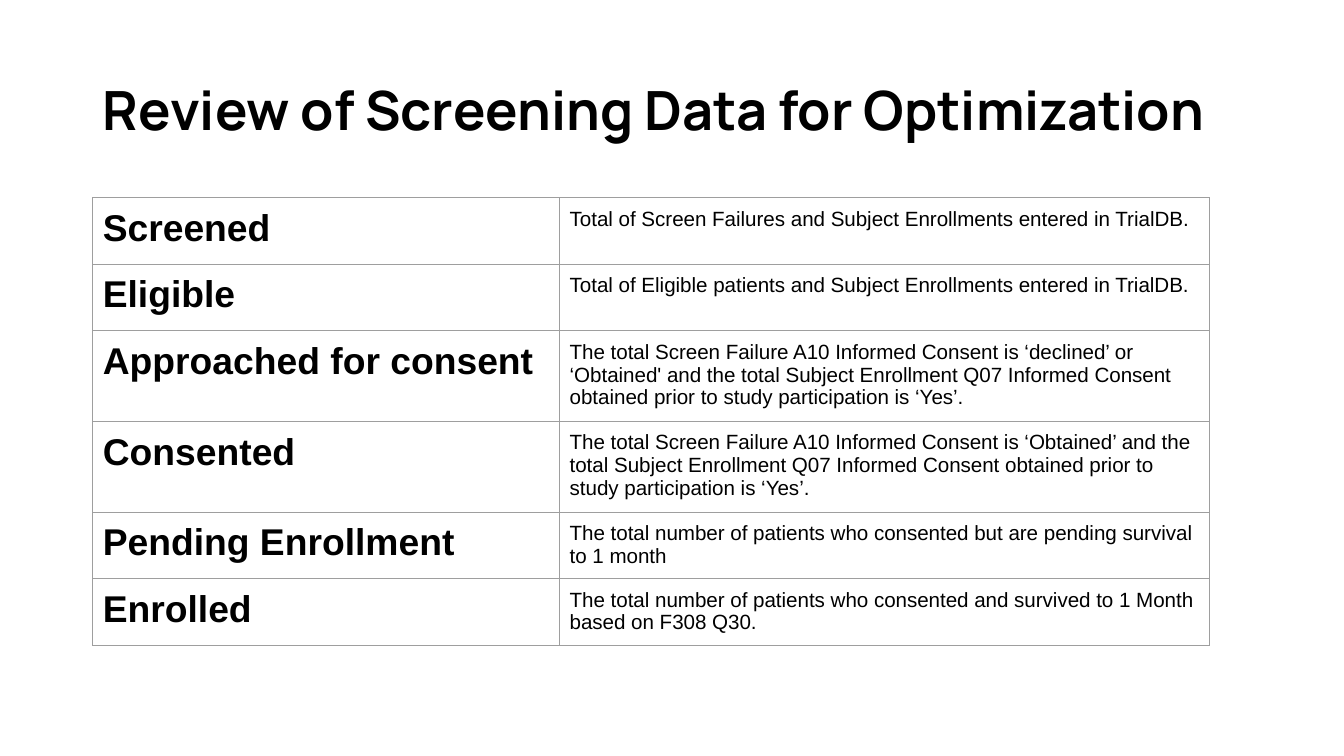
"""Build the slide that defines the screening data categories."""
import dataclasses
import typing

import lxml.etree
import pptx
import pptx.dml.color
import pptx.enum.text
import pptx.oxml.ns
import pptx.util


@dataclasses.dataclass(frozen=True)
class Theme:
    """Colours, fonts and type sizes."""
    ink: str = "000000"
    border: str = "9E9E9E"
    title_font: str = "Manrope"
    table_font: str = "Arial"
    title_size: float = 38.67
    term_size: float = 26.67
    meaning_size: float = 14.67
    border_width: float = 0.75


class Category(typing.NamedTuple):
    """One table row."""
    term: str
    meaning: str
    height: int


THEME = Theme()
CATEGORIES = [
    Category("Screened", "Total of Screen Failures and Subject Enrollments entered in TrialDB.", 66),
    Category("Eligible", "Total of Eligible patients and Subject Enrollments entered in TrialDB.", 66),
    Category("Approached for consent",
             "The total Screen Failure A10 Informed Consent is ‘declined’ or ‘Obtained' and the total "
             "Subject Enrollment Q07 Informed Consent obtained prior to study participation is ‘Yes’.", 90),
    Category("Consented",
             "The total Screen Failure A10 Informed Consent is ‘Obtained’ and the total "
             "Subject Enrollment Q07 Informed Consent obtained prior to study participation is ‘Yes’.", 90),
    Category("Pending Enrollment",
             "The total number of patients who consented but are pending survival to 1 month", 66),
    Category("Enrolled",
             "The total number of patients who consented and survived to 1 Month based on F308 Q30.", 66),
]
COLUMN_WIDTHS = (463, 645)


def px(n: int) -> int:
    """Turn px, 100 to the inch, into EMU."""
    return n * 9144


def add_run(p: typing.Any, text: str, font: str, size: float, bold: bool) -> None:
    """Add one formatted run to a paragraph."""
    r = p.add_run()
    r.text = text
    r.font.name = font
    r.font.size = pptx.util.Pt(size)
    r.font.bold = bold
    r.font.color.rgb = pptx.dml.color.RGBColor.from_string(THEME.ink)


def set_borders(cell: typing.Any) -> None:
    """Draw a thin line on all four sides of a cell."""
    qn = pptx.oxml.ns.qn
    tc_pr = cell._tc.get_or_add_tcPr()
    for i, side in enumerate(("lnL", "lnR", "lnT", "lnB")):
        ln = lxml.etree.Element(qn(f"a:{side}"), w=str(pptx.util.Pt(THEME.border_width)))
        fill = lxml.etree.SubElement(ln, qn("a:solidFill"))
        lxml.etree.SubElement(fill, qn("a:srgbClr"), val=THEME.border)
        tc_pr.insert(i, ln)


def fill_cell(cell: typing.Any, text: str, size: float, bold: bool) -> None:
    """Write and format one table cell."""
    cell.margin_left = cell.margin_right = cell.margin_top = cell.margin_bottom = px(10)
    cell.vertical_anchor = pptx.enum.text.MSO_ANCHOR.TOP
    cell.fill.background()
    set_borders(cell)
    add_run(cell.text_frame.paragraphs[0], text, THEME.table_font, size, bold)


def format_title(sp: typing.Any, text: str) -> None:
    """Place the title placeholder and write its text."""
    sp.left, sp.top, sp.width, sp.height = px(92), px(40), px(1142), px(145)
    tf = sp.text_frame
    tf.word_wrap = True
    tf.auto_size = pptx.enum.text.MSO_AUTO_SIZE.NONE
    tf.vertical_anchor = pptx.enum.text.MSO_ANCHOR.MIDDLE
    tf.margin_left = tf.margin_right = px(10)
    tf.margin_top = tf.margin_bottom = px(5)
    p = tf.paragraphs[0]
    p.alignment = pptx.enum.text.PP_ALIGN.LEFT
    p.line_spacing = 0.9
    add_run(p, text, THEME.title_font, THEME.title_size, True)


def add_category_table(s: typing.Any) -> None:
    """Add the table of terms and their meanings."""
    height = sum(category.height for category in CATEGORIES)
    table = s.shapes.add_table(len(CATEGORIES), len(COLUMN_WIDTHS), px(92), px(196),
                               px(sum(COLUMN_WIDTHS)), px(height)).table
    table.first_row = False
    table.horz_banding = False
    for column, width in zip(table.columns, COLUMN_WIDTHS):
        column.width = px(width)
    for i, category in enumerate(CATEGORIES):
        table.rows[i].height = px(category.height)
        fill_cell(table.cell(i, 0), category.term, THEME.term_size, True)
        fill_cell(table.cell(i, 1), category.meaning, THEME.meaning_size, False)


def main() -> None:
    """Build and save the presentation."""
    prs = pptx.Presentation()
    prs.slide_width, prs.slide_height = px(1333), px(750)
    s = prs.slides.add_slide(prs.slide_layouts[5])
    format_title(s.shapes.title, "Review of Screening Data for Optimization")
    add_category_table(s)
    prs.save("out.pptx")


if __name__ == "__main__":
    main()
